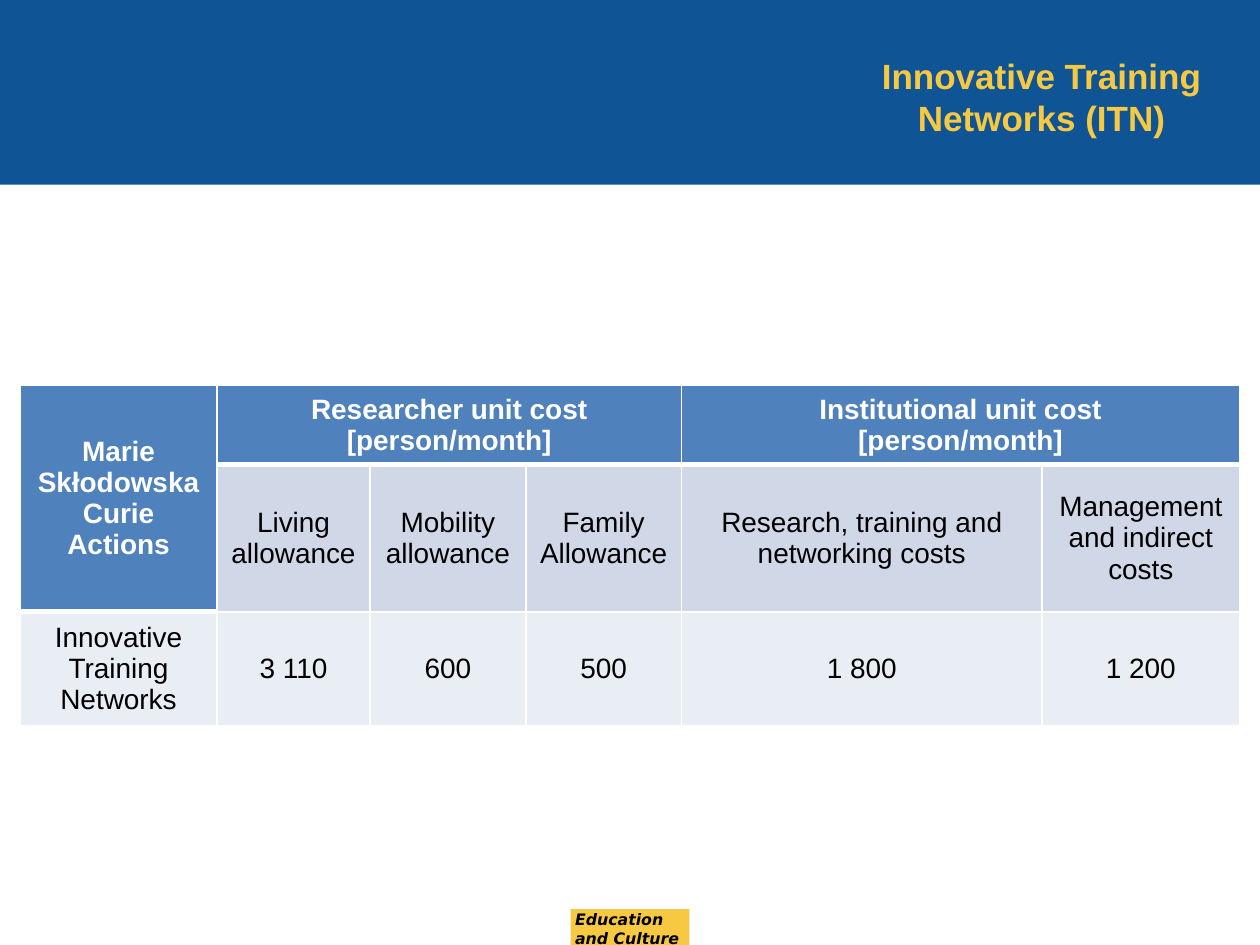
from dataclasses import dataclass

from lxml import etree
from pptx import Presentation
from pptx.dml.color import RGBColor
from pptx.enum.shapes import MSO_SHAPE
from pptx.enum.text import MSO_ANCHOR, PP_ALIGN
from pptx.oxml.ns import qn
from pptx.util import Pt

RECTANGLE = MSO_SHAPE.RECTANGLE
MIDDLE = MSO_ANCHOR.MIDDLE
CENTER, LEFT = PP_ALIGN.CENTER, PP_ALIGN.LEFT


@dataclass(frozen=True)
class Theme:
    """Colours, fonts and type sizes of the slide."""
    banner: str = "0F5494"
    accent: str = "F7C943"
    header: str = "4F81BD"
    subheader: str = "D0D8E8"
    body: str = "E9EDF4"
    white: str = "FFFFFF"
    black: str = "000000"
    font: str = "Arial"
    badge_font: str = "DejaVu Sans"
    title_size: int = 20
    table_size: int = 16
    badge_size: int = 9


THEME = Theme()
COLUMN_WIDTHS = (112.5, 87.5, 89, 89, 206, 113)
ROW_HEIGHTS = (44.5, 84, 65)
ROW_FILLS = (THEME.header, THEME.subheader, THEME.body)
ROWS = (
    ("Marie Skłodowska Curie Actions", "Researcher unit cost\n[person/month]", "", "",
     "Institutional unit cost\n[person/month]", ""),
    ("", "Living allowance", "Mobility allowance", "Family Allowance",
     "Research, training and networking costs", "Management and indirect costs"),
    ("Innovative Training Networks", "3 110", "600", "500", "1 800", "1 200"),
)
MERGES = (((0, 0), (1, 0)), ((0, 1), (0, 3)), ((0, 4), (0, 5)))


def write_text(frame, text, size, color, bold, font=THEME.font, align=CENTER, italic=False):
    """Fill a text frame with evenly styled paragraphs."""
    frame.word_wrap = True
    frame.text = text
    for para in frame.paragraphs:
        para.alignment = align
        para.font.name = font
        para.font.size = Pt(size)
        para.font.bold = bold
        para.font.italic = italic
        para.font.color.rgb = RGBColor.from_string(color)


def add_block(page, box, color):
    """Add a plain filled rectangle."""
    block = page.shapes.add_shape(RECTANGLE, *map(Pt, box))
    block.shadow.inherit = False
    block.fill.solid()
    block.fill.fore_color.rgb = RGBColor.from_string(color)
    block.line.fill.background()


def add_label(page, box, text, **style):
    """Add a vertically centred text box."""
    frame = page.shapes.add_textbox(*map(Pt, box)).text_frame
    frame.vertical_anchor = MIDDLE
    write_text(frame, text, **style)


def add_banner(page, box):
    """Add the top band with the slide title at its right."""
    left, top, width, height = box
    add_block(page, box, THEME.banner)
    add_label(page, (left + width - 241, top + 27.5, 232.5, 55.5),
              "Innovative Training Networks (ITN)",
              size=THEME.title_size, color=THEME.accent, bold=True)


def add_badge(page, box):
    """Add the department badge at the foot of the slide."""
    left, top, width, height = box
    add_block(page, box, THEME.accent)
    add_label(page, (left - 4.5, top - 3.5, 148.5, 29), "Education\vand Culture",
              size=THEME.badge_size, color=THEME.black, bold=True,
              font=THEME.badge_font, align=LEFT, italic=True)


def set_borders(cell, bottom):
    """Draw white lines around a cell, with the given bottom width."""
    properties = cell._tc.get_or_add_tcPr()
    sides = (("lnL", 1), ("lnR", 1), ("lnT", 1), ("lnB", bottom))
    for index, (side, width) in enumerate(sides):
        line = etree.Element(qn(f"a:{side}"), w=str(Pt(width)))
        fill = etree.SubElement(line, qn("a:solidFill"))
        etree.SubElement(fill, qn("a:srgbClr"), val=THEME.white)
        properties.insert(index, line)


def add_cost_table(page, box):
    """Add the table of unit costs."""
    table = page.shapes.add_table(len(ROWS), len(COLUMN_WIDTHS), *map(Pt, box)).table
    for column, width in zip(table.columns, COLUMN_WIDTHS):
        column.width = Pt(width)
    for row, height in zip(table.rows, ROW_HEIGHTS):
        row.height = Pt(height)
    for start, end in MERGES:
        table.cell(*start).merge(table.cell(*end))
    for row, texts in enumerate(ROWS):
        for column, text in enumerate(texts):
            cell = table.cell(row, column)
            is_header = row == 0 or (row, column) == (1, 0)
            cell.vertical_anchor = MIDDLE
            cell.fill.solid()
            fill = THEME.header if is_header else ROW_FILLS[row]
            cell.fill.fore_color.rgb = RGBColor.from_string(fill)
            set_borders(cell, 3 if is_header else 1)
            if text:
                write_text(cell.text_frame, text, THEME.table_size,
                           THEME.white if is_header else THEME.black, is_header)


def main():
    """Build and save the slide."""
    deck = Presentation()
    deck.slide_width, deck.slide_height = Pt(720), Pt(540)
    page = deck.slides.add_slide(deck.slide_layouts[6])
    add_banner(page, (0, 0, 720, 105.5))
    add_badge(page, (326, 519.5, 68, 20.5))
    add_cost_table(page, (11.5, 220, sum(COLUMN_WIDTHS), sum(ROW_HEIGHTS)))
    deck.save("out.pptx")


if __name__ == "__main__":
    main()
